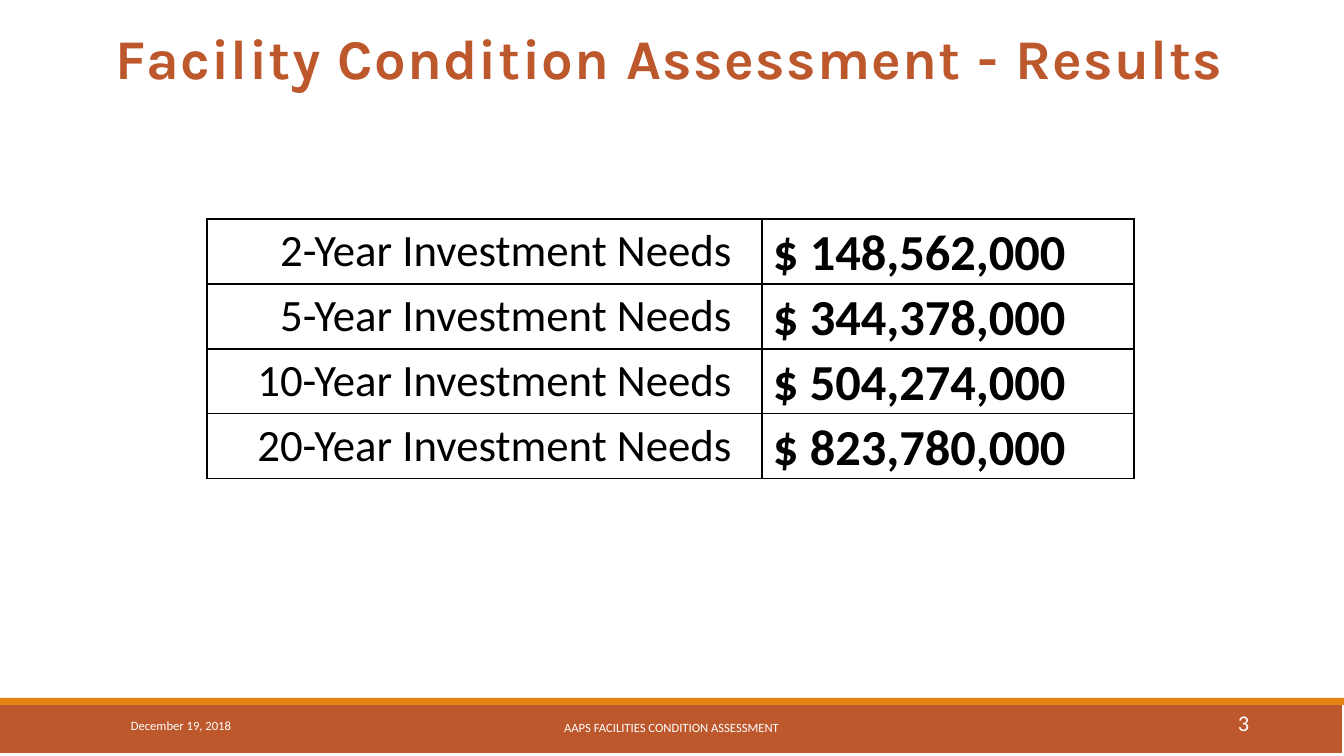
from pptx import Presentation, util as u
from pptx.dml.color import RGBColor
from pptx.enum import shapes, text
from pptx.oxml import parse_xml
from pptx.oxml.ns import nsdecls

# Content
TITLE = "Facility Condition Assessment - Results"
NEEDS = [
    ("2-Year Investment Needs", "$ 148,562,000"),
    ("5-Year Investment Needs", "$ 344,378,000"),
    ("10-Year Investment Needs", "$ 504,274,000"),
    ("20-Year Investment Needs", "$ 823,780,000"),
]
LEFT, MID, RIGHT = text.PP_ALIGN.LEFT, text.PP_ALIGN.CENTER, text.PP_ALIGN.RIGHT
FOOTER = [  # words, box in px, size, alignment
    ("December 19, 2018", (121, 706, 272, 40), 9, LEFT),
    ("AAPS FACILITIES CONDITION ASSESSMENT", (406, 708, 531, 40), 9, MID),
    ("3", (1115, 703, 144, 40), 16, RIGHT),
]

# Look
RUST = RGBColor(0xBD, 0x58, 0x2C)
AMBER = RGBColor(0xE4, 0x83, 0x12)
WHITE = RGBColor(0xFF, 0xFF, 0xFF)
BLACK = RGBColor(0, 0, 0)
BANDS = [((-2, 703, 1344, 50), RUST), ((0, 698, 1344, 7), AMBER)]
COLS = (555, 372)
ROW = 65


def px(n):
    return u.Emu(round(n * 914400 / 100.8))


def box(dims):
    return [px(n) for n in dims]


def style(para, size, color, align, name="Calibri", bold=False):
    para.alignment = align
    font = para.font
    font.name, font.size, font.bold = name, u.Pt(size), bold
    font.color.rgb = color


def border(cell):
    props = cell._tc.get_or_add_tcPr()
    for at, side in enumerate(("lnL", "lnR", "lnT", "lnB")):
        props.insert(at, parse_xml(
            f'<a:{side} {nsdecls("a")} w="12700"><a:solidFill>'
            f'<a:srgbClr val="{BLACK}"/></a:solidFill></a:{side}>'))


prs = Presentation()
prs.slide_width, prs.slide_height = px(1344), px(756)
slide = prs.slides.add_slide(prs.slide_layouts[5])

# Bottom bands
for dims, color in BANDS:
    band = slide.shapes.add_shape(shapes.MSO_SHAPE.RECTANGLE, *box(dims))
    band.shadow.inherit = False
    band.fill.solid()
    band.fill.fore_color.rgb = color
    band.line.fill.background()

# Title
title = slide.shapes.title
title.left, title.top, title.width, title.height = box((15, 22, 1310, 81))
frame = title.text_frame
frame.text = TITLE
frame.vertical_anchor = text.MSO_ANCHOR.MIDDLE
para = frame.paragraphs[0]
para.line_spacing = 0.85
style(para, 40, RUST, MID, "Karla", True)
para.runs[0].font._element.set("spc", "100")

# Footer
for words, dims, size, align in FOOTER:
    frame = slide.shapes.add_textbox(*box(dims)).text_frame
    frame.word_wrap = True
    frame.vertical_anchor = text.MSO_ANCHOR.MIDDLE
    frame.text = words
    style(frame.paragraphs[0], size, WHITE, align)

# Table of needs
table = slide.shapes.add_table(
    len(NEEDS), len(COLS),
    *box((207, 219, sum(COLS), ROW * len(NEEDS)))).table
table.first_row = table.horz_banding = False
for col, width in zip(table.columns, COLS):
    col.width = px(width)
for row, pair in zip(table.rows, NEEDS):
    row.height = px(ROW)
    label, cost = row.cells
    for cell, words in zip(row.cells, pair):
        cell.text = words
        cell.fill.background()
        border(cell)
    label.margin_left, label.margin_right = px(10), px(30)
    label.margin_top = label.margin_bottom = px(5)
    style(label.text_frame.paragraphs[0], 32, BLACK, RIGHT)
    cost.margin_left = px(11)
    cost.margin_right = cost.margin_top = cost.margin_bottom = 0
    cost.vertical_anchor = text.MSO_ANCHOR.BOTTOM
    style(cost.text_frame.paragraphs[0], 36, BLACK, LEFT, bold=True)

prs.save("out.pptx")
